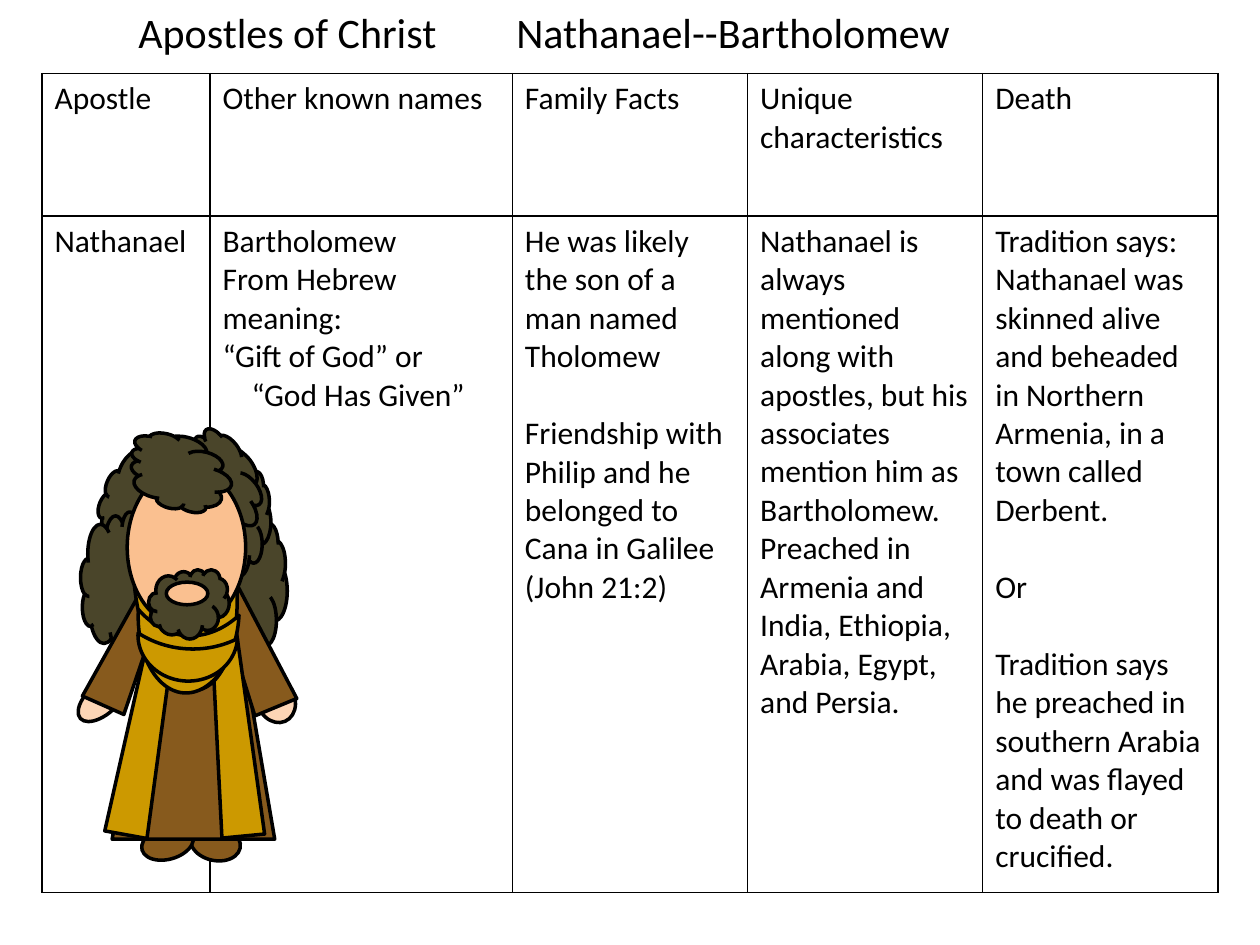
from collections import namedtuple
from dataclasses import dataclass

from lxml.etree import SubElement
from pptx import Presentation
from pptx.dml.color import RGBColor
from pptx.enum.shapes import MSO_SHAPE
from pptx.enum.text import MSO_AUTO_SIZE
from pptx.oxml.ns import qn
from pptx.util import Inches, Pt

Box = namedtuple("Box", "left top width height")
Part = namedtuple("Part", "kind color left top width height rotation", defaults=[0])


@dataclass(frozen=True)
class Theme:
    font: str = "Calibri"
    title_size: int = 24
    body_size: int = 18
    paragraph_gap: int = 22
    border_width: int = 1
    outline_width: int = 2
    ink: str = "000000"
    hair: str = "4A452A"
    robe: str = "875A1D"
    scarf: str = "CC9900"
    hand: str = "FCD5B5"
    skin: str = "FAC090"


THEME = Theme()
SLIDE_WIDTH, SLIDE_HEIGHT = Inches(10), Inches(7.5)
COLUMN_WEIGHTS = (10, 18, 14, 14, 14)
ROW_SHARES = (0.174, 0.826)
FIGURE_COLUMNS, FIGURE_ROWS = 180, 360
MOON_CURVE = 0.71

HEADERS = ("Apostle", "Other known names", "Family Facts", "Unique characteristics", "Death")
DETAILS = (
    ("Nathanael",),
    ("Bartholomew", "From Hebrew meaning:", "“Gift of God” or", "“God Has Given”"),
    (
        "He was likely the son of a man named Tholomew",
        "Friendship with Philip and he belonged to Cana in Galilee (John 21:2)",
    ),
    (
        "Nathanael is always mentioned along with apostles, but his associates "
        "mention him as Bartholomew.",
        "Preached in Armenia and India, Ethiopia, Arabia, Egypt, and Persia.",
    ),
    (
        "Tradition says: Nathanael was skinned alive and beheaded in Northern Armenia, "
        "in a town called Derbent.",
        "Or",
        "Tradition says he preached in southern Arabia and was flayed to death or crucified.",
    ),
)
SPACED_COLUMNS = (2, 4)
INDENTED_TEXT = "“God Has Given”"

CLOUD, OVAL = MSO_SHAPE.CLOUD, MSO_SHAPE.OVAL
TRAPEZOID, MOON = MSO_SHAPE.TRAPEZOID, MSO_SHAPE.MOON
FIGURE_PARTS = (
    Part(CLOUD, THEME.hair, 104, 85, 64, 111),
    Part(CLOUD, THEME.hair, 104, 44, 51, 83),
    Part(CLOUD, THEME.hair, 87, 12, 58, 83, 322.6),
    Part(CLOUD, THEME.hair, 22, 24, 58, 83, 23.3),
    Part(CLOUD, THEME.hair, 4, 76, 64, 111),
    Part(OVAL, THEME.robe, 97, 319, 28, 40, 102.1),
    Part(OVAL, THEME.robe, 60, 318, 26, 42, 74.5),
    Part(TRAPEZOID, THEME.robe, 29, 147, 129, 189),
    Part(TRAPEZOID, THEME.scarf, 40, 141, 34, 193, 10.2),
    Part(OVAL, THEME.hand, 9, 202, 24, 46, 48.4),
    Part(OVAL, THEME.hand, 144, 207, 30, 37, 337.1),
    Part(TRAPEZOID, THEME.robe, 24, 135, 36, 99, 24),
    Part(TRAPEZOID, THEME.robe, 122, 136, 36, 99, 337.5),
    Part(TRAPEZOID, THEME.scarf, 107, 141, 34, 193, 354.6),
    Part(MOON, THEME.scarf, 48, 134, 87, 81, 264.1),
    Part(MOON, THEME.scarf, 56, 148, 64, 80, 273.3),
    Part(MOON, THEME.scarf, 70, 153, 36, 79, 273.3),
    Part(OVAL, THEME.skin, 41, 41, 94, 127),
    Part(CLOUD, THEME.hair, 54, 4, 58, 83, 284.3),
    Part(CLOUD, THEME.hair, 58, 122, 64, 55),
    Part(OVAL, THEME.skin, 72, 132, 33, 18),
)


def slide_box(left, top, width, height):
    return Box(
        int(SLIDE_WIDTH * left),
        int(SLIDE_HEIGHT * top),
        int(SLIDE_WIDTH * width),
        int(SLIDE_HEIGHT * height),
    )


def add_text(paragraph, text, size):
    run = paragraph.add_run()
    run.text = text
    run.font.name = THEME.font
    run.font.size = Pt(size)
    run.font.color.rgb = RGBColor.from_string(THEME.ink)


def add_title(slide, box):
    frame = slide.shapes.add_textbox(*box).text_frame
    frame.word_wrap = True
    frame.auto_size = MSO_AUTO_SIZE.SHAPE_TO_FIT_TEXT
    add_text(frame.paragraphs[0], "Apostles of Christ\t\tNathanael--Bartholomew", THEME.title_size)


def set_borders(cell):
    properties = cell._tc.get_or_add_tcPr()
    for position, side in enumerate(("a:lnL", "a:lnR", "a:lnT", "a:lnB")):
        line = SubElement(properties, qn(side), w=str(Pt(THEME.border_width)))
        fill = SubElement(line, qn("a:solidFill"))
        SubElement(fill, qn("a:srgbClr"), val=THEME.ink)
        properties.remove(line)
        properties.insert(position, line)


def fill_cell(cell, texts, gap):
    cell.fill.background()
    set_borders(cell)
    frame = cell.text_frame
    for index, text in enumerate(texts):
        paragraph = frame.add_paragraph() if index else frame.paragraphs[0]
        if index and gap:
            paragraph.space_before = Pt(gap)
        if text == INDENTED_TEXT:
            paragraph._p.get_or_add_pPr().set("marL", str(Inches(0.23)))
        add_text(paragraph, text, THEME.body_size)


def add_fact_table(slide, box):
    table = slide.shapes.add_table(len(ROW_SHARES), len(HEADERS), *box).table
    table.first_row = False
    table.horz_banding = False
    for column, weight in zip(table.columns, COLUMN_WEIGHTS):
        column.width = int(box.width * weight / sum(COLUMN_WEIGHTS))
    for row, share in zip(table.rows, ROW_SHARES):
        row.height = int(box.height * share)
    for index, (header, details) in enumerate(zip(HEADERS, DETAILS)):
        gap = THEME.paragraph_gap if index in SPACED_COLUMNS else 0
        fill_cell(table.cell(0, index), (header,), 0)
        fill_cell(table.cell(1, index), details, gap)


def add_figure(slide, box):
    column, row = box.width / FIGURE_COLUMNS, box.height / FIGURE_ROWS
    group = slide.shapes.add_group_shape()
    for part in FIGURE_PARTS:
        shape = group.shapes.add_shape(
            part.kind,
            int(box.left + part.left * column),
            int(box.top + part.top * row),
            int(part.width * column),
            int(part.height * row),
        )
        shape.rotation = part.rotation
        shape.shadow.inherit = False
        shape.fill.solid()
        shape.fill.fore_color.rgb = RGBColor.from_string(part.color)
        shape.line.color.rgb = RGBColor.from_string(THEME.ink)
        shape.line.width = Pt(THEME.outline_width)
        if part.kind == MOON:
            shape.adjustments[0] = MOON_CURVE


def main():
    presentation = Presentation()
    presentation.slide_width = SLIDE_WIDTH
    presentation.slide_height = SLIDE_HEIGHT
    slide = presentation.slides.add_slide(presentation.slide_layouts[6])
    add_fact_table(slide, slide_box(1 / 30, 7 / 90, 14 / 15, 13 / 15))
    add_title(slide, slide_box(0.1, 0, 0.81, 1 / 15))
    add_figure(slide, slide_box(0.06, 0.44, 0.18, 0.48))
    presentation.save("out.pptx")


if __name__ == "__main__":
    main()
